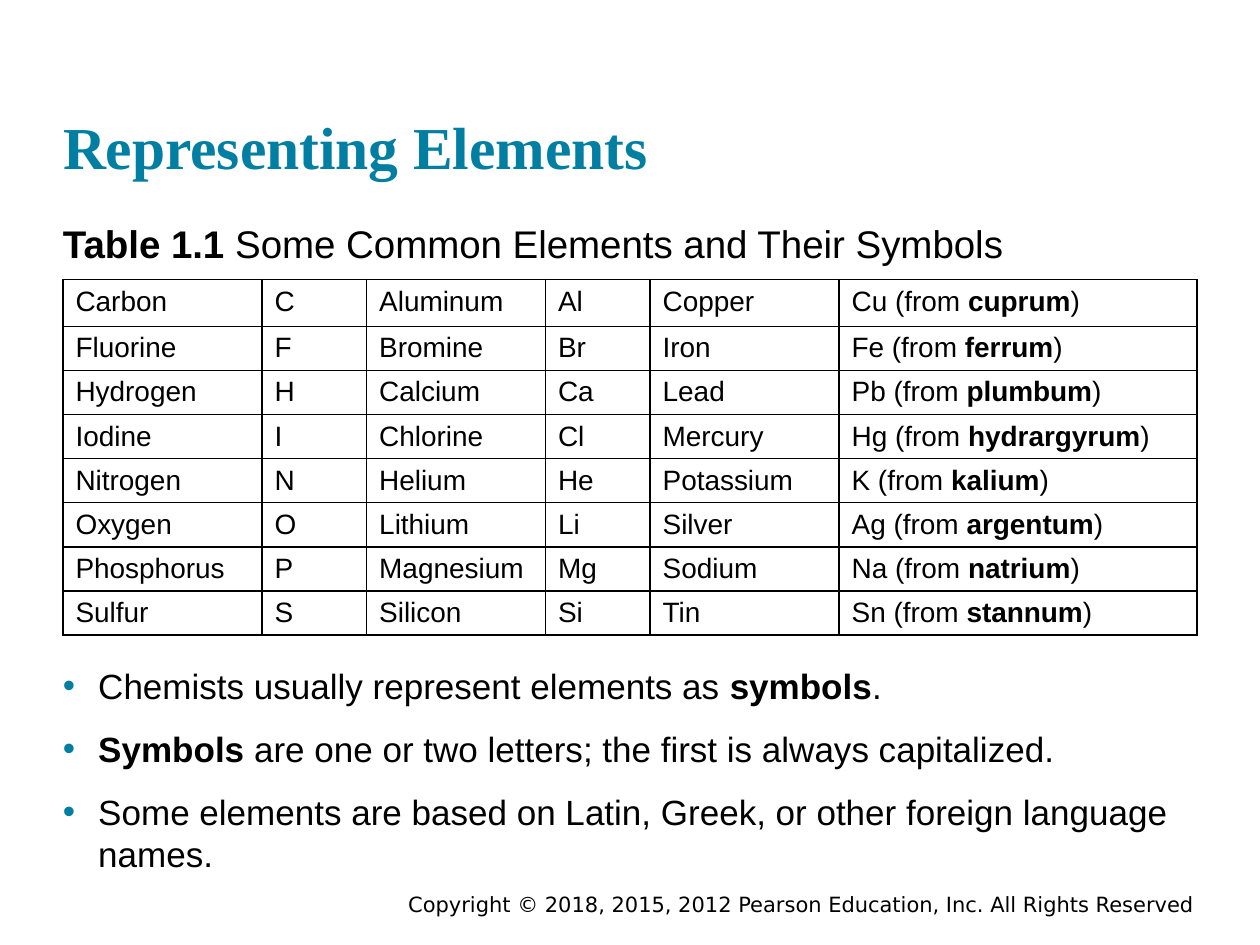
import pptx
import pptx.util
import pptx.dml.color
import pptx.enum.text
import pptx.oxml
import pptx.oxml.ns
from pptx.util import Inches

COLORS = {"text": "000000", "accent": "007FA3", "cell": "FFFFFF", "border": "000000"}

ELEMENTS = [
    ("Carbon", "C", "Aluminum", "Al", "Copper", "Cu", "cuprum"),
    ("Fluorine", "F", "Bromine", "Br", "Iron", "Fe", "ferrum"),
    ("Hydrogen", "H", "Calcium", "Ca", "Lead", "Pb", "plumbum"),
    ("Iodine", "I", "Chlorine", "Cl", "Mercury", "Hg", "hydrargyrum"),
    ("Nitrogen", "N", "Helium", "He", "Potassium", "K", "kalium"),
    ("Oxygen", "O", "Lithium", "Li", "Silver", "Ag", "argentum"),
    ("Phosphorus", "P", "Magnesium", "Mg", "Sodium", "Na", "natrium"),
    ("Sulfur", "S", "Silicon", "Si", "Tin", "Sn", "stannum"),
]
COLUMN_WIDTHS = [1.58, 0.83, 1.42, 0.83, 1.5, 2.84]
ROW_HEIGHTS = [0.37] + [0.35] * (len(ELEMENTS) - 1)

# Each statement is a list of (text, bold) runs.
STATEMENTS = [
    [("Chemists usually represent elements as ", False), ("symbols", True), (".", False)],
    [("Symbols", True), (" are one or two letters; the first is always capitalized.", False)],
    [("Some elements are based on Latin, Greek, or other foreign language names.", False)],
]


def rgb(name):
    return pptx.dml.color.RGBColor.from_string(COLORS[name])


def xml(tag, content="", attributes=""):
    namespace = pptx.oxml.ns.nsdecls("a")
    return pptx.oxml.parse_xml(f"<a:{tag} {namespace} {attributes}>{content}</a:{tag}>")


def solid_fill(name):
    return f'<a:solidFill><a:srgbClr val="{COLORS[name]}"/></a:solidFill>'


class SlideBuilder:
    """Holds the text style and the slide being filled."""

    font = "Arial"

    def __init__(self, slide):
        self.slide = slide

    def add_runs(self, paragraph, runs, size, font=None, color="text"):
        for text, bold in runs:
            run = paragraph.add_run()
            run.text = text
            run.font.name = font or self.font
            run.font.size = pptx.util.Pt(size)
            run.font.bold = bold
            run.font.color.rgb = rgb(color)

    def prepare_frame(self, shape, margin=0):
        frame = shape.text_frame
        frame.word_wrap = True
        frame.auto_size = pptx.enum.text.MSO_AUTO_SIZE.NONE
        frame.margin_left = frame.margin_right = Inches(margin)
        frame.margin_top = frame.margin_bottom = Inches(margin / 2)
        return frame

    def title(self, text, left, top, width, height):
        heading = self.slide.shapes.title
        heading.left, heading.top = Inches(left), Inches(top)
        heading.width, heading.height = Inches(width), Inches(height)
        frame = self.prepare_frame(heading)
        frame.vertical_anchor = pptx.enum.text.MSO_ANCHOR.BOTTOM
        paragraph = frame.paragraphs[0]
        paragraph.alignment = pptx.enum.text.PP_ALIGN.LEFT
        self.add_runs(paragraph, [(text, True)], 34, "Times New Roman", "accent")

    def text(self, runs, left, top, width, height, size, font=None, align="LEFT", margin=0):
        box = self.slide.shapes.add_textbox(
            Inches(left), Inches(top), Inches(width), Inches(height))
        paragraph = self.prepare_frame(box, margin).paragraphs[0]
        paragraph.alignment = pptx.enum.text.PP_ALIGN[align]
        self.add_runs(paragraph, runs, size, font)

    def bullets(self, statements, left, top, width, height, size):
        box = self.slide.shapes.add_textbox(
            Inches(left), Inches(top), Inches(width), Inches(height))
        frame = self.prepare_frame(box)
        for index, runs in enumerate(statements):
            paragraph = frame.add_paragraph() if index else frame.paragraphs[0]
            if index:
                paragraph.space_before = pptx.util.Pt(12)
            properties = paragraph._p.get_or_add_pPr()
            properties.set("marL", str(Inches(0.28)))
            properties.set("indent", str(-Inches(0.28)))
            properties.append(xml("buClr", f'<a:srgbClr val="{COLORS["accent"]}"/>'))
            properties.append(xml("buFont", attributes=f'typeface="{self.font}"'))
            properties.append(xml("buChar", attributes='char="•"'))
            self.add_runs(paragraph, runs, size)

    def cell(self, cell, runs, size):
        cell.margin_top, cell.margin_bottom = Inches(0.05), Inches(0.04)
        self.add_runs(cell.text_frame.paragraphs[0], runs, size)
        properties = cell._tc.get_or_add_tcPr()
        for side in ("lnL", "lnR", "lnT", "lnB"):
            width = pptx.util.Pt(1)
            properties.append(xml(side, solid_fill("border"), f'w="{width}"'))
        cell.fill.solid()
        cell.fill.fore_color.rgb = rgb("cell")

    def table(self, rows, left, top, widths, heights, size):
        table = self.slide.shapes.add_table(
            len(rows), len(widths), Inches(left), Inches(top),
            Inches(sum(widths)), Inches(sum(heights))).table
        table.first_row = table.horz_banding = False
        for column, width in zip(table.columns, widths):
            column.width = Inches(width)
        for row, height, contents in zip(table.rows, heights, rows):
            row.height = Inches(height)
            for cell, runs in zip(row.cells, contents):
                self.cell(cell, runs, size)


def element_row(*names, symbol, latin):
    origin = [(f"{symbol} (from ", False), (latin, True), (")", False)]
    return [[(name, False)] for name in names] + [origin]


def main():
    presentation = pptx.Presentation()
    presentation.slide_width, presentation.slide_height = Inches(10), Inches(7.5)
    builder = SlideBuilder(presentation.slides.add_slide(presentation.slide_layouts[5]))

    builder.text([("Copyright © 2018, 2015, 2012 Pearson Education, Inc. All Rights Reserved", False)],
                 1.75, 7.03, 7.83, 0.3, 12, font="DejaVu Sans", align="RIGHT", margin=0.1)
    builder.title("Representing Elements", 0.5, 0.24, 9, 1.2)
    builder.text([("Table 1.1", True), (" Some Common Elements and Their Symbols", False)],
                 0.5, 1.75, 9, 0.34, 22)
    rows = [element_row(*names, symbol=symbol, latin=latin)
            for *names, symbol, latin in ELEMENTS]
    builder.table(rows, 0.5, 2.22, COLUMN_WIDTHS, ROW_HEIGHTS, 16)
    builder.bullets(STATEMENTS, 0.5, 5.27, 9, 1.66, 20)
    presentation.save("out.pptx")


if __name__ == "__main__":
    main()
